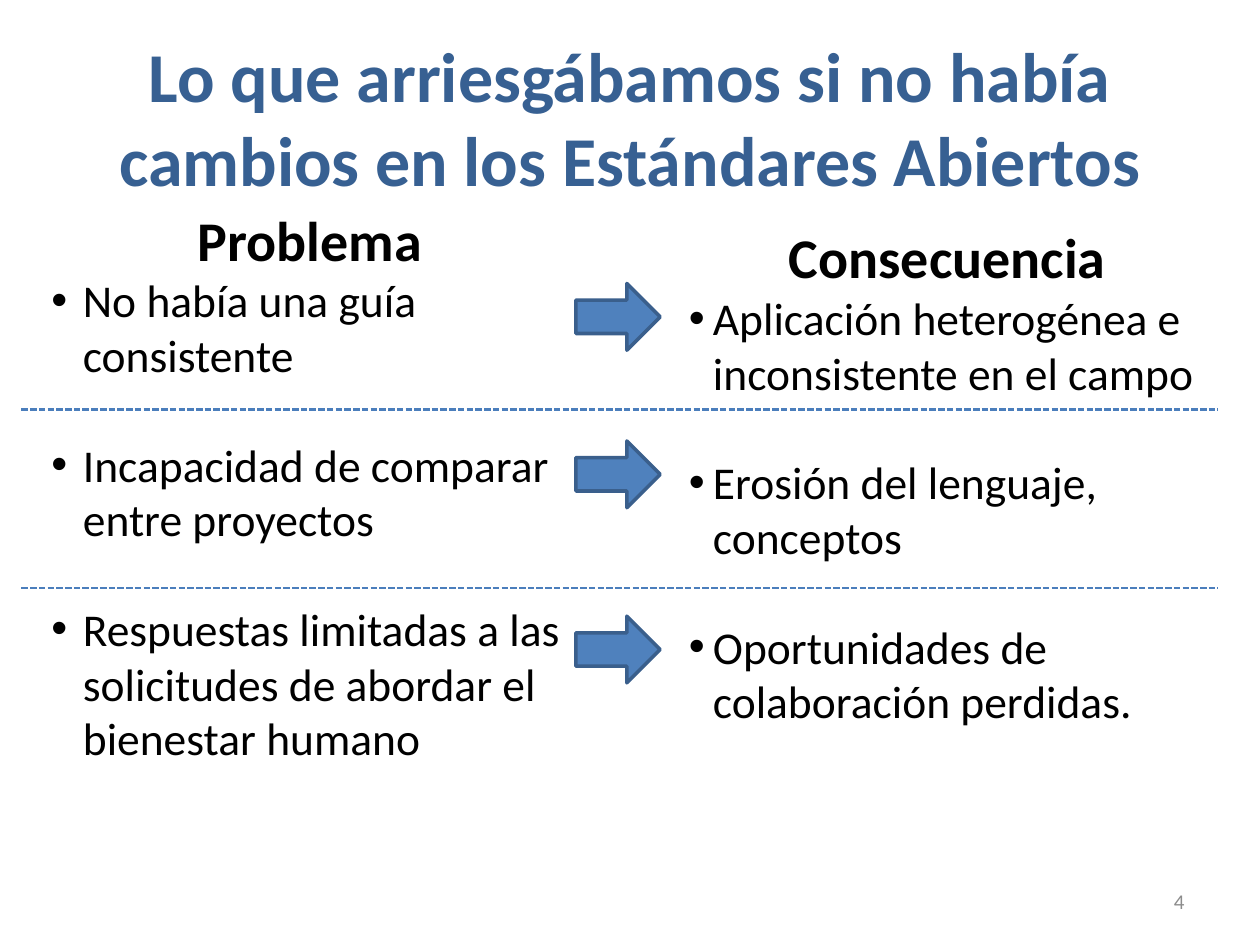
"""Build the slide that pairs each problem with its consequence."""
from lxml.etree import SubElement
from pptx import Presentation
from pptx.dml.color import RGBColor
from pptx.enum.dml import MSO_LINE
from pptx.enum.shapes import MSO_CONNECTOR, MSO_SHAPE
from pptx.enum.text import MSO_ANCHOR, PP_ALIGN
from pptx.oxml.ns import qn
from pptx.util import Inches, Pt

TITLE_BLUE = RGBColor(0x37, 0x60, 0x92)
ARROW_BLUE = RGBColor(0x4F, 0x81, 0xBD)
OUTLINE_BLUE = RGBColor(0x3A, 0x5F, 0x8C)
DIVIDER_BLUE = RGBColor(0x4B, 0x7E, 0xBC)
BLACK = RGBColor(0, 0, 0)
GRAY = RGBColor(0x8C, 0x8C, 0x8C)

presentation = Presentation()
presentation.slide_width = Inches(10)
presentation.slide_height = Inches(7.5)
column = presentation.slide_width // 100
row = presentation.slide_height // 75
slide = presentation.slides.add_slide(presentation.slide_layouts[6])


def add_text_frame(left, top, width, height, anchor=MSO_ANCHOR.TOP):
    box = slide.shapes.add_textbox(
        round(left * column), round(top * row), round(width * column), round(height * row))
    box.text_frame.word_wrap = True
    box.text_frame.vertical_anchor = anchor
    return box.text_frame


def format_text(paragraph, text, size, color=BLACK, bold=False,
                align=PP_ALIGN.LEFT, indent=None, space_after=0):
    paragraph.alignment = align
    paragraph.space_after = Pt(space_after)
    run = paragraph.add_run()
    run.text = text
    run.font.name = "Calibri"
    run.font.size = Pt(size)
    run.font.bold = bold
    run.font.color.rgb = color
    if indent:
        properties = paragraph._p.get_or_add_pPr()
        properties.set("marL", str(Inches(indent)))
        properties.set("indent", str(-Inches(indent)))
        SubElement(properties, qn("a:buFont"), typeface="Arial")
        SubElement(properties, qn("a:buChar"), char="•")


title = add_text_frame(5, 3, 90, 12.5, anchor=MSO_ANCHOR.MIDDLE)
format_text(title.paragraphs[0],
            "Lo que arriesgábamos si no había cambios en los Estándares Abiertos",
            size=40, color=TITLE_BLUE, bold=True, align=PP_ALIGN.CENTER)

page_number = add_text_frame(71.7, 69.5, 23.3, 4, anchor=MSO_ANCHOR.MIDDLE)
format_text(page_number.paragraphs[0], "4", size=12, color=GRAY, align=PP_ALIGN.RIGHT)

lists = [
    (3.1, 15.8, 49.1, 0.25, "Problema", [
        "No había una guía consistente",
        "Incapacidad de comparar entre proyectos",
        "Respuestas limitadas a las solicitudes de abordar el bienestar humano"]),
    (53.7, 17.2, 41.4, 0.19, "Consecuencia", [
        "Aplicación heterogénea e inconsistente en el campo",
        "Erosión del lenguaje, conceptos",
        "Oportunidades de colaboración perdidas."]),
]
for left, top, height, indent, heading, items in lists:
    frame = add_text_frame(left, top, 43, height)
    format_text(frame.paragraphs[0], heading, size=32, bold=True, align=PP_ALIGN.CENTER)
    for item in items:
        gap = 0 if item == items[-1] else 31.5
        format_text(frame.add_paragraph(), item, size=26, indent=indent, space_after=gap)

for top in (22.5, 35, 48.9):
    arrow = slide.shapes.add_shape(
        MSO_SHAPE.RIGHT_ARROW, round(45.7 * column), round(top * row),
        round(6.7 * column), round(5.3 * row))
    arrow.shadow.inherit = False
    arrow.fill.solid()
    arrow.fill.fore_color.rgb = ARROW_BLUE
    arrow.line.color.rgb = OUTLINE_BLUE
    arrow.line.width = Pt(2)

for height in (32.5, 46.7):
    divider = slide.shapes.add_connector(
        MSO_CONNECTOR.STRAIGHT, round(1.7 * column), round(height * row),
        round(96.7 * column), round(height * row))
    divider.line.color.rgb = DIVIDER_BLUE
    divider.line.width = Pt(1.25)
    divider.line.dash_style = MSO_LINE.SQUARE_DOT
    SubElement(divider._element.spPr, qn("a:effectLst"))

presentation.save("out.pptx")
